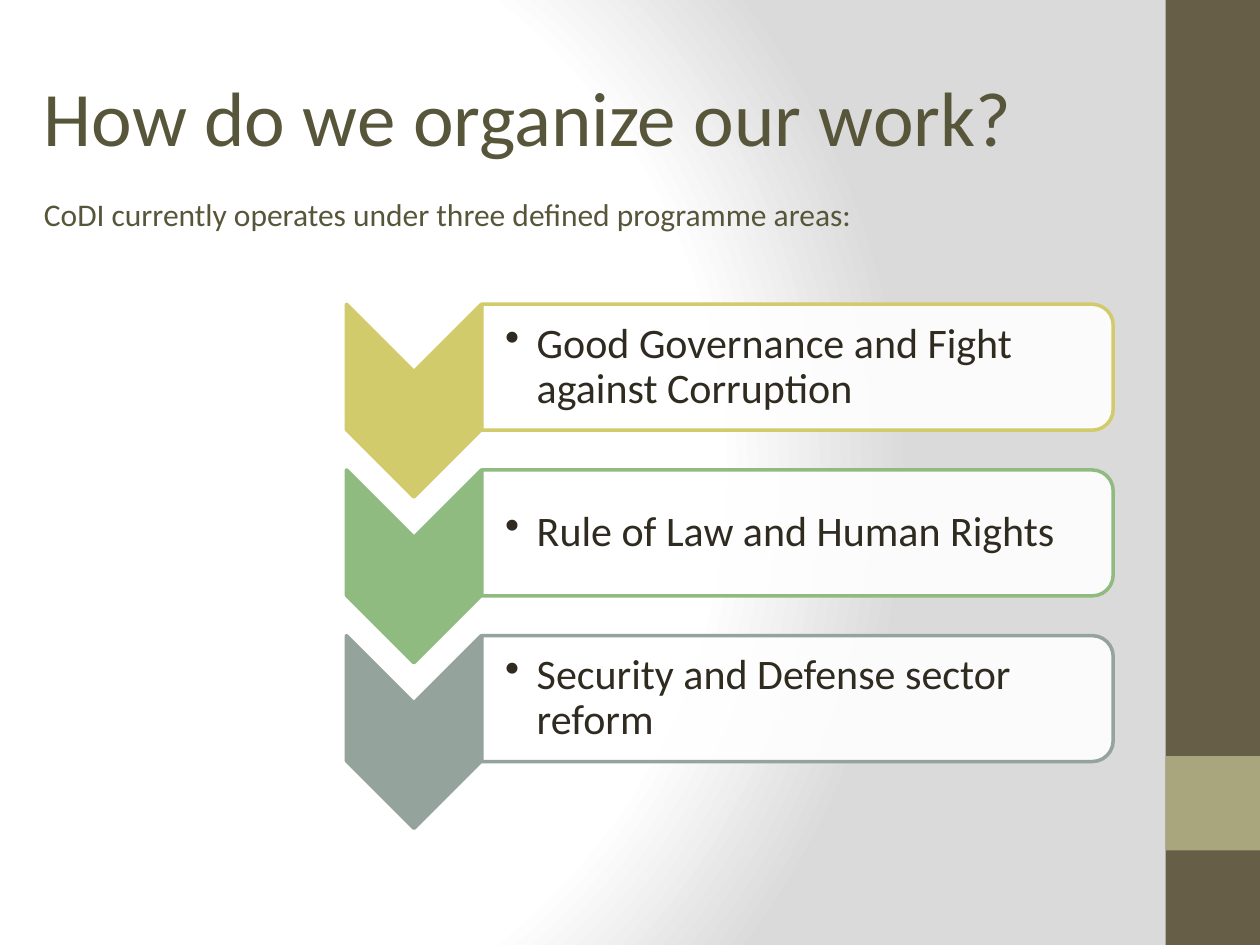
from pptx import Presentation
from pptx.dml.color import RGBColor
from pptx.enum.shapes import MSO_SHAPE
from pptx.enum.text import MSO_ANCHOR, MSO_AUTO_SIZE
from pptx.oxml import parse_xml
from pptx.oxml.ns import nsdecls
from pptx.util import Inches, Pt

RECTANGLE = MSO_SHAPE.RECTANGLE
CHEVRON = MSO_SHAPE.CHEVRON
PANEL = MSO_SHAPE.ROUND_2_SAME_RECTANGLE
MIDDLE = MSO_ANCHOR.MIDDLE
FIT_SHAPE = MSO_AUTO_SIZE.SHAPE_TO_FIT_TEXT

CELL = 0.25  # inches; the slide is 40 columns by 30 rows
BACKGROUND_STOPS = ((0, "FFFFFF"), (75, "FFFFFF"), (100, "DADADA"))
HEADINGS = (
    ("CoDI currently operates under three defined programme areas:", 6, 27, 1.6, 18),
    ("How do we organize our work?", 2, 31.88, 3.36, 44),
)
AREAS = (
    ("Good Governance and Fight against Corruption", "D2CB6C"),
    ("Rule of Law and Human Rights", "8FBB80"),
    ("Security and Defense sector reform", "95A39D"),
)
FIRST_ROW, ROW_STEP = 9.66, 5.26


def color(value):
    return RGBColor.from_string(value)


def grid(*cells):
    return [Inches(cell * CELL) for cell in cells]


class SlideBuilder:
    font = "Calibri"
    heading_color = "58563A"
    body_color = "2F2B20"

    def __init__(self, page):
        self.page = page

    def background(self, stops):
        """Fill the page with a circular gradient centred left of the middle."""
        self.page.background.fill.gradient()
        gradient = self.page.element.xpath("p:cSld/p:bg//a:gradFill")[0]
        stop_xml = "".join(
            f'<a:gs pos="{share * 1000}"><a:srgbClr val="{value}"/></a:gs>'
            for share, value in stops)
        gradient.getparent().replace(gradient, parse_xml(
            f'<a:gradFill {nsdecls("a")} rotWithShape="1"><a:gsLst>{stop_xml}</a:gsLst>'
            '<a:path path="circle"><a:fillToRect l="20000" t="50000" r="100000" b="50000"/>'
            '</a:path></a:gradFill>'))

    def shape(self, kind, left, top, width, height, fill, line=None):
        shape = self.page.shapes.add_shape(kind, *grid(left, top, width, height))
        shape.shadow.inherit = False
        shape.fill.solid()
        shape.fill.fore_color.rgb = color(fill)
        if line:
            shape.line.color.rgb = color(line)
            shape.line.width = Pt(2)
        else:
            shape.line.fill.background()
        return shape

    def turned_shape(self, kind, left, top, width, height, fill, line):
        """Place a shape turned by 90 degrees so that it covers the given area."""
        shift = (width - height) / 2
        shape = self.shape(kind, left + shift, top - shift, height, width, fill, line)
        shape.rotation = 90
        return shape

    def panel(self, left, top, width, height, line):
        panel = self.turned_shape(PANEL, left, top, width, height, "FFFFFF", line)
        fill_color = panel.element.xpath("p:spPr/a:solidFill/a:srgbClr")[0]
        fill_color.append(parse_xml(f'<a:alpha {nsdecls("a")} val="90000"/>'))

    def text(self, content, left, top, width, height, size, value):
        box = self.page.shapes.add_textbox(*grid(left, top, width, height))
        para = box.text_frame.paragraphs[0]
        para.text = content
        para.font.name = self.font
        para.font.size = Pt(size)
        para.font.color.rgb = color(value)
        return box.text_frame

    def heading(self, content, top, width, height, size):
        frame = self.text(content, 1, top, width, height, size, self.heading_color)
        frame.word_wrap = False
        frame.auto_size = FIT_SHAPE

    def bullet(self, content, left, top, width, height):
        frame = self.text(content, left, top, width, height, 24, self.body_color)
        frame.word_wrap = True
        frame.vertical_anchor = MIDDLE
        frame.margin_left = Inches(0.19)
        frame.margin_top = frame.margin_right = frame.margin_bottom = Inches(0.02)
        para = frame.paragraphs[0]
        para.line_spacing = 0.9
        properties = para._p.get_or_add_pPr()
        properties.set("marL", str(Inches(0.25)))
        properties.set("indent", str(-Inches(0.25)))
        properties.append(parse_xml(f'<a:buChar {nsdecls("a")} char="•"/>'))

    def programme_area(self, content, top, accent):
        self.turned_shape(CHEVRON, 11, top, 4.28, 6.12, accent, accent)
        self.panel(15.3, top, 20.04, 4, accent)
        self.bullet(content, 15.28, top + 0.2, 19.84, 3.6)


def main():
    deck = Presentation()
    deck.slide_width, deck.slide_height = grid(40, 30)
    builder = SlideBuilder(deck.slides.add_slide(deck.slide_layouts[6]))
    builder.background(BACKGROUND_STOPS)
    builder.shape(RECTANGLE, 37, 0, 3, 30, "675E47")
    builder.shape(RECTANGLE, 37, 24, 3, 3, "A9A57C")
    for index, (content, accent) in enumerate(AREAS):
        builder.programme_area(content, FIRST_ROW + index * ROW_STEP, accent)
    for heading in HEADINGS:
        builder.heading(*heading)
    deck.save("out.pptx")


if __name__ == "__main__":
    main()
